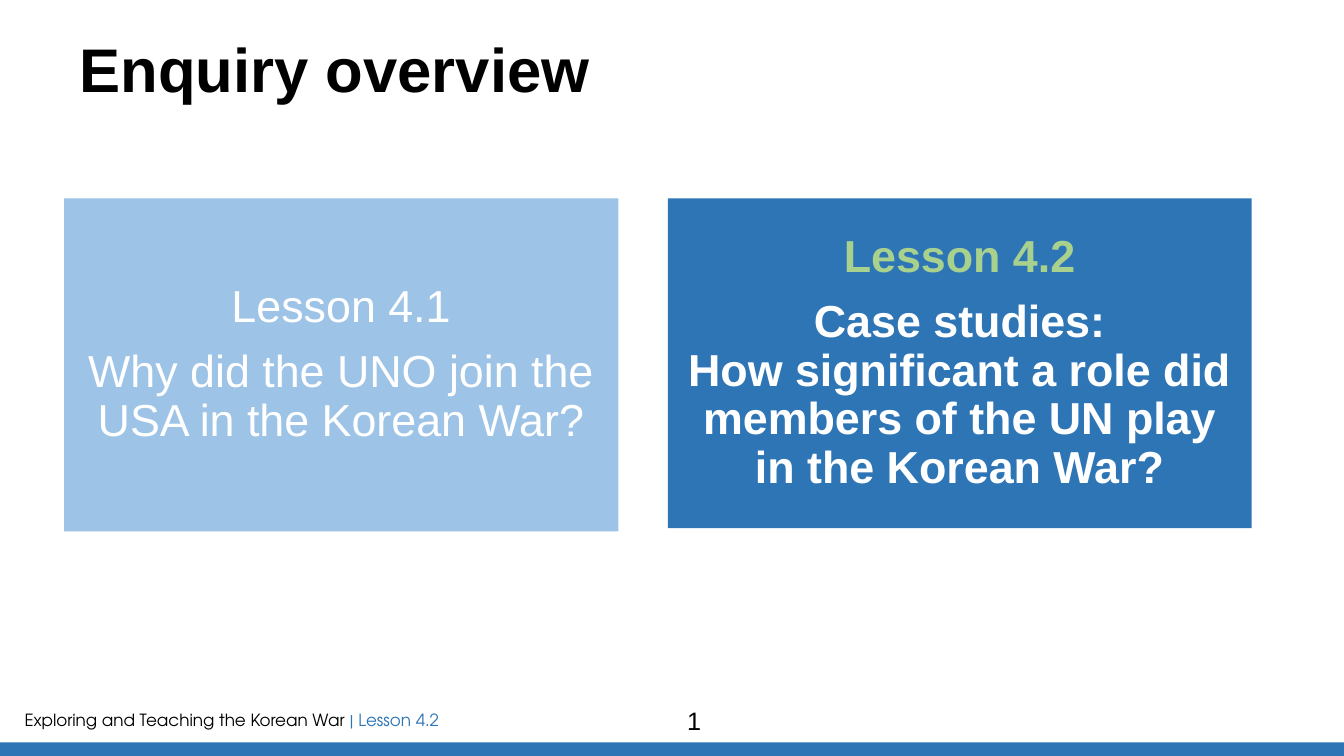
from dataclasses import dataclass

from pptx import Presentation
from pptx.dml.color import RGBColor
from pptx.enum.shapes import MSO_SHAPE as Shp
from pptx.enum.text import MSO_ANCHOR as Anchor, PP_ALIGN as Align
from pptx.shapes.autoshape import Shape
from pptx.slide import Slide
from pptx.text.text import TextFrame, _Paragraph as Paragraph
from pptx.util import Pt

PX = 9525
SLIDE_W, SLIDE_H = 1280, 720
LESSON_TOP = 189
LESSON_INSET = 13
BLACK = RGBColor(0x00, 0x00, 0x00)
WHITE = RGBColor(0xFF, 0xFF, 0xFF)
BLUE = RGBColor(0x2E, 0x75, 0xB6)
LIGHT_BLUE = RGBColor(0x9D, 0xC3, 0xE6)
GREEN = RGBColor(0xA9, 0xD1, 0x8E)
BODY_FONT = "Arial"
FOOTER_FONT = "TeX Gyre Adventor"


@dataclass(frozen=True)
class Lesson:
    left: int
    width: int
    height: int
    fill: RGBColor
    heading: str
    heading_color: RGBColor
    question: str
    bold: bool


LESSONS = [
    Lesson(636, 556, 314, BLUE, "Lesson 4.2", GREEN,
           "Case studies:\vHow significant a role did members of the UN play "
           "in the Korean War?", True),
    Lesson(61, 528, 317, LIGHT_BLUE, "Lesson 4.1", WHITE,
           "Why did the UNO join the USA in the Korean War?", False),
]


def format_runs(p: Paragraph, size: int, color: RGBColor,
                bold: bool = False, font: str = BODY_FONT) -> None:
    for r in p.runs:
        r.font.name = font
        r.font.size = Pt(size)
        r.font.bold = bold
        r.font.color.rgb = color


def set_insets(tf: TextFrame, inset: int) -> None:
    tf.margin_left = tf.margin_right = inset * PX
    tf.margin_top = tf.margin_bottom = inset * PX


def add_text(s: Slide, left: int, top: int, width: int, height: int,
             text: str) -> TextFrame:
    sp = s.shapes.add_textbox(left * PX, top * PX, width * PX, height * PX)
    tf = sp.text_frame
    tf.word_wrap = True
    tf.text = text
    return tf


def add_rect(s: Slide, left: int, top: int, width: int, height: int,
             fill: RGBColor) -> Shape:
    sp = s.shapes.add_shape(Shp.RECTANGLE, left * PX, top * PX,
                            width * PX, height * PX)
    sp.shadow.inherit = False
    sp.fill.solid()
    sp.fill.fore_color.rgb = fill
    sp.line.fill.background()
    return sp


def add_lesson(s: Slide, lesson: Lesson) -> None:
    sp = add_rect(s, lesson.left, LESSON_TOP, lesson.width, lesson.height,
                  lesson.fill)
    tf = sp.text_frame
    tf.word_wrap = True
    tf.vertical_anchor = Anchor.MIDDLE
    set_insets(tf, LESSON_INSET)
    tf.text = f"{lesson.heading}\n{lesson.question}"
    for p, color in zip(tf.paragraphs, (lesson.heading_color, WHITE)):
        p.alignment = Align.CENTER
        p.line_spacing = 0.9
        p.space_after = Pt(12)
        format_runs(p, 32, color, lesson.bold)


def add_footer(s: Slide) -> None:
    tf = add_text(s, 14, 671, 751, 29, "Exploring and Teaching the Korean War ")
    p = tf.paragraphs[0]
    r = p.add_run()
    r.text = "| Lesson 4.2"
    format_runs(p, 12, BLACK, font=FOOTER_FONT)
    r.font.color.rgb = BLUE
    add_rect(s, 0, 707, SLIDE_W, 13, BLUE)


def add_title(s: Slide) -> None:
    tf = add_text(s, 76, 37, 1104, 121, "Enquiry overview")
    set_insets(tf, 0)
    p = tf.paragraphs[0]
    p.line_spacing = 0.9
    format_runs(p, 44, BLACK, True)


def add_page_number(s: Slide) -> None:
    p = add_text(s, 417, 667, 488, 38, "1").paragraphs[0]
    p.alignment = Align.CENTER
    format_runs(p, 18, BLACK)


def main() -> None:
    prs = Presentation()
    prs.slide_width, prs.slide_height = SLIDE_W * PX, SLIDE_H * PX
    s = prs.slides.add_slide(prs.slide_layouts[6])
    add_footer(s)
    add_title(s)
    for lesson in LESSONS:
        add_lesson(s, lesson)
    add_page_number(s)
    prs.save("out.pptx")


if __name__ == "__main__":
    main()
